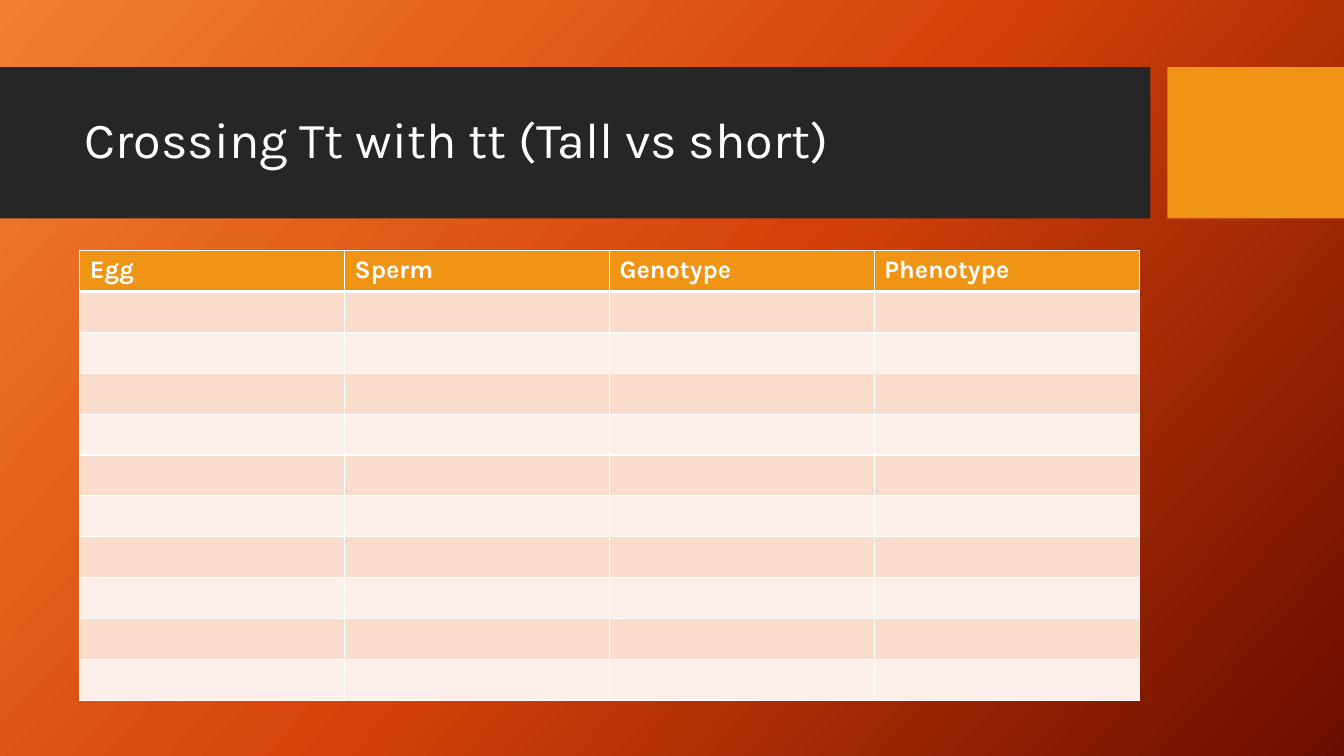
from copy import deepcopy
from dataclasses import dataclass

from lxml import etree
from pptx import Presentation
from pptx.dml.color import RGBColor
from pptx.enum import shapes, text
from pptx.oxml import ns
from pptx.slide import Slide
from pptx.util import Pt


@dataclass(frozen=True)
class Theme:
    """Colours, font and type sizes of the slide."""

    font: str = "Karla"
    title_size: float = 36
    header_size: float = 18
    white: str = "FFFFFF"
    charcoal: str = "262626"
    amber: str = "F09415"
    row_tints: tuple[str, str] = ("F9DCCC", "FCEEE8")
    gradient: tuple[str, ...] = ("F18031", "D54209", "6A0D00")
    gradient_angle: float = 42
    thin_border: float = 1
    thick_border: float = 3


@dataclass(frozen=True)
class Box:
    """A rectangle measured in points."""

    left: float
    top: float
    width: float
    height: float

    def lengths(self) -> tuple[Pt, Pt, Pt, Pt]:
        """Return the left, top, width and height as lengths."""
        return Pt(self.left), Pt(self.top), Pt(self.width), Pt(self.height)


@dataclass(frozen=True)
class Band:
    """A plain filled rectangle."""

    box: Box
    color: str


THEME = Theme()
SLIDE_WIDTH, SLIDE_HEIGHT = 960, 540
BANDS = (
    Band(Box(0, 48, 821.8, 108), THEME.charcoal),
    Band(Box(833.8, 48, 126.2, 108), THEME.amber),
)
TITLE = "Crossing Tt with tt (Tall vs short)"
TITLE_BOX = Box(53.3, 59, 756.8, 85)
HEADERS = ("Egg", "Sperm", "Genotype", "Phenotype")
CROSS_ROWS = 10
CROSS_BOX = Box(57, 179, 756.8, 321.2)


def paint_background(slide: Slide) -> None:
    """Fill the slide with the diagonal gradient."""
    fill = slide.background.fill
    fill.gradient()
    fill.gradient_angle = 360 - THEME.gradient_angle
    stop_list = slide.element.find(".//" + ns.qn("a:gsLst"))
    stop_list.append(deepcopy(stop_list[-1]))
    last = len(THEME.gradient) - 1
    for index, (stop, color) in enumerate(zip(fill.gradient_stops, THEME.gradient)):
        stop.position = index / last
        stop.color.rgb = RGBColor.from_string(color)


def draw_band(slide: Slide, band: Band) -> None:
    """Draw one unlined rectangle."""
    bar = slide.shapes.add_shape(shapes.MSO_SHAPE.RECTANGLE, *band.box.lengths())
    bar.shadow.inherit = False
    bar.fill.solid()
    bar.fill.fore_color.rgb = RGBColor.from_string(band.color)
    bar.line.fill.background()


def style_font(font, size: float, bold: bool = False) -> None:
    """Apply the white theme font."""
    font.name = THEME.font
    font.size = Pt(size)
    font.bold = bold
    font.color.rgb = RGBColor.from_string(THEME.white)


def draw_title(slide: Slide) -> None:
    """Write the title over the dark band."""
    frame = slide.shapes.add_textbox(*TITLE_BOX.lengths()).text_frame
    frame.word_wrap = True
    frame.vertical_anchor = text.MSO_ANCHOR.MIDDLE
    frame.text = TITLE
    heading = frame.paragraphs[0]
    heading.line_spacing = 0.9
    style_font(heading.runs[0].font, THEME.title_size)


def add_border(cell, side: str, width: float) -> None:
    """Add a solid white line to one side of a cell."""
    properties = cell._tc.get_or_add_tcPr()
    line = etree.SubElement(properties, ns.qn(f"a:ln{side}"), w=str(Pt(width)))
    solid = etree.SubElement(line, ns.qn("a:solidFill"))
    etree.SubElement(solid, ns.qn("a:srgbClr"), val=THEME.white)


def style_cell(cell, row: int) -> None:
    """Give a cell its borders, fill and font."""
    heavy_side = {0: "B", 1: "T"}.get(row)
    for side in "LRTB":
        add_border(cell, side, THEME.thick_border if side == heavy_side else THEME.thin_border)
    color = THEME.row_tints[(row - 1) % 2] if row else THEME.amber
    cell.fill.solid()
    cell.fill.fore_color.rgb = RGBColor.from_string(color)
    if row:
        cell.text_frame.paragraphs[0].font.size = Pt(THEME.header_size)


def draw_cross_table(slide: Slide) -> None:
    """Draw the cross table with its headers and empty rows."""
    row_count = CROSS_ROWS + 1
    cross = slide.shapes.add_table(row_count, len(HEADERS), *CROSS_BOX.lengths()).table
    for column in cross.columns:
        column.width = Pt(CROSS_BOX.width / len(HEADERS))
    for index, row in enumerate(cross.rows):
        row.height = Pt(CROSS_BOX.height / row_count)
        for cell in row.cells:
            style_cell(cell, index)
    for cell, header in zip(cross.rows[0].cells, HEADERS):
        cell.text_frame.text = header
        style_font(cell.text_frame.paragraphs[0].runs[0].font, THEME.header_size, bold=True)


def main() -> None:
    """Build and save the slide."""
    deck = Presentation()
    deck.slide_width, deck.slide_height = Pt(SLIDE_WIDTH), Pt(SLIDE_HEIGHT)
    slide = deck.slides.add_slide(deck.slide_layouts[6])
    paint_background(slide)
    for band in BANDS:
        draw_band(slide, band)
    draw_title(slide)
    draw_cross_table(slide)
    deck.save("out.pptx")


if __name__ == "__main__":
    main()
